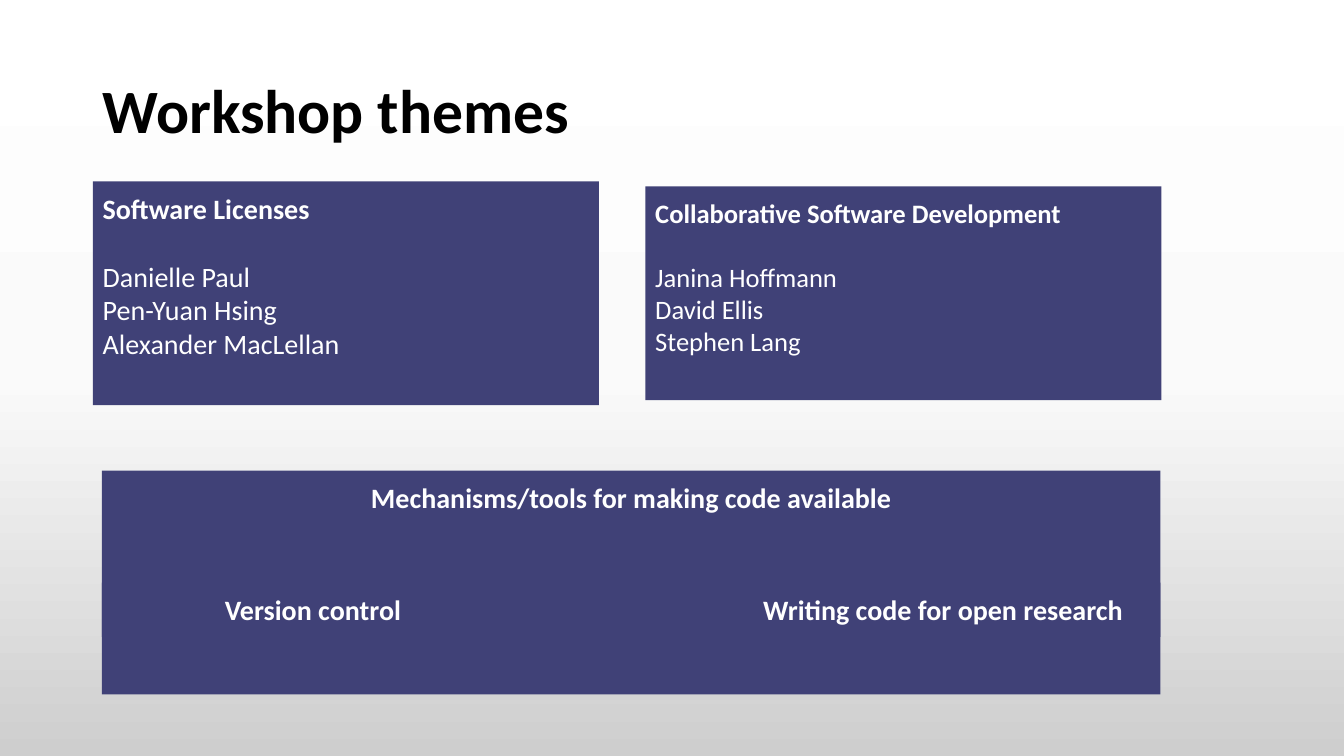
from copy import deepcopy
from dataclasses import dataclass

from pptx import Presentation
from pptx.dml.color import RGBColor
from pptx.enum.shapes import MSO_SHAPE
from pptx.enum.text import MSO_ANCHOR, MSO_AUTO_SIZE, PP_ALIGN
from pptx.oxml.ns import qn
from pptx.util import Inches, Pt

RECTANGLE = MSO_SHAPE.RECTANGLE
TOP, MIDDLE = MSO_ANCHOR.TOP, MSO_ANCHOR.MIDDLE
LEFT, CENTER = PP_ALIGN.LEFT, PP_ALIGN.CENTER
NO_AUTOFIT = MSO_AUTO_SIZE.NONE
TITLE_ONLY = 5


@dataclass(frozen=True)
class Theme:
    font: str = "Calibri"
    title_size: int = 44
    body_size: int = 20
    compact_size: int = 19
    title_color: str = "000000"
    panel_color: str = "404177"
    panel_text: str = "FFFFFF"
    background: tuple = ((0, "FFFFFF"), (0.5, "FAFAFA"), (1, "CECECE"))


theme = Theme()


def format_font(font, size, color, bold):
    values = {"name": theme.font, "size": Pt(size), "bold": bold}
    for attribute, value in values.items():
        setattr(font, attribute, value)
    font.color.rgb = RGBColor.from_string(color)


def add_panel(box, size, align, heading, people=()):
    panel = slide.shapes.add_shape(RECTANGLE, *map(Inches, box))
    panel.shadow.inherit = False
    panel.fill.solid()
    panel.fill.fore_color.rgb = RGBColor.from_string(theme.panel_color)
    panel.line.fill.background()
    frame = panel.text_frame
    inset = Inches(0.1)
    values = {"word_wrap": True, "auto_size": NO_AUTOFIT, "vertical_anchor": TOP,
              "margin_left": inset, "margin_right": inset,
              "margin_top": inset, "margin_bottom": inset}
    for attribute, value in values.items():
        setattr(frame, attribute, value)
    for index, line in enumerate((heading, *people)):
        paragraph = frame.add_paragraph() if index else frame.paragraphs[0]
        paragraph.text = line
        paragraph.alignment = align
        format_font(paragraph.font, size, theme.panel_text, index == 0)
        if index == 1:
            # One line of space between the heading and the names
            paragraph.space_before = Pt(round(size * 1.22, 1))


presentation = Presentation()
presentation.slide_width = Inches(13.33)
presentation.slide_height = Inches(7.5)
slide = presentation.slides.add_slide(presentation.slide_layouts[TITLE_ONLY])

# Background: white fading down to grey
backdrop = slide.background.fill
backdrop.gradient()
backdrop.gradient_angle = 270
first_stop = next(slide.element.iter(qn("a:gs")))
first_stop.addnext(deepcopy(first_stop))
for stop, (position, color) in zip(backdrop.gradient_stops, theme.background):
    stop.position = position
    stop.color.rgb = RGBColor.from_string(color)

# Title
title = slide.shapes.title
title.left, title.top, title.width, title.height = map(Inches, (0.92, 0.4, 9.71, 1.45))
title.text_frame.text = "Workshop themes"
title.text_frame.auto_size = NO_AUTOFIT
title.text_frame.vertical_anchor = MIDDLE
title_line = title.text_frame.paragraphs[0]
title_line.alignment = LEFT
title_line.line_spacing = 0.9
format_font(title_line.font, theme.title_size, theme.title_color, True)

# Themes with their people
add_panel((0.92, 1.8, 5.02, 2.22), theme.body_size, LEFT, "Software Licenses",
          ("Danielle Paul", "Pen-Yuan Hsing", "Alexander MacLellan"))
add_panel((6.4, 1.85, 5.12, 2.12), theme.compact_size, LEFT,
          "Collaborative Software Development",
          ("Janina Hoffmann", "David Ellis", "Stephen Lang"))

# Mechanisms theme with its two topics
add_panel((1.01, 4.67, 10.5, 2.22), theme.body_size, CENTER,
          "Mechanisms/tools for making code available")
for topic_left, topic in ((1.01, "Version control "),
                          (7.26, "Writing code for open research ")):
    add_panel((topic_left, 5.78, 4.25, 0.54), theme.body_size, CENTER, topic)

presentation.save("out.pptx")
